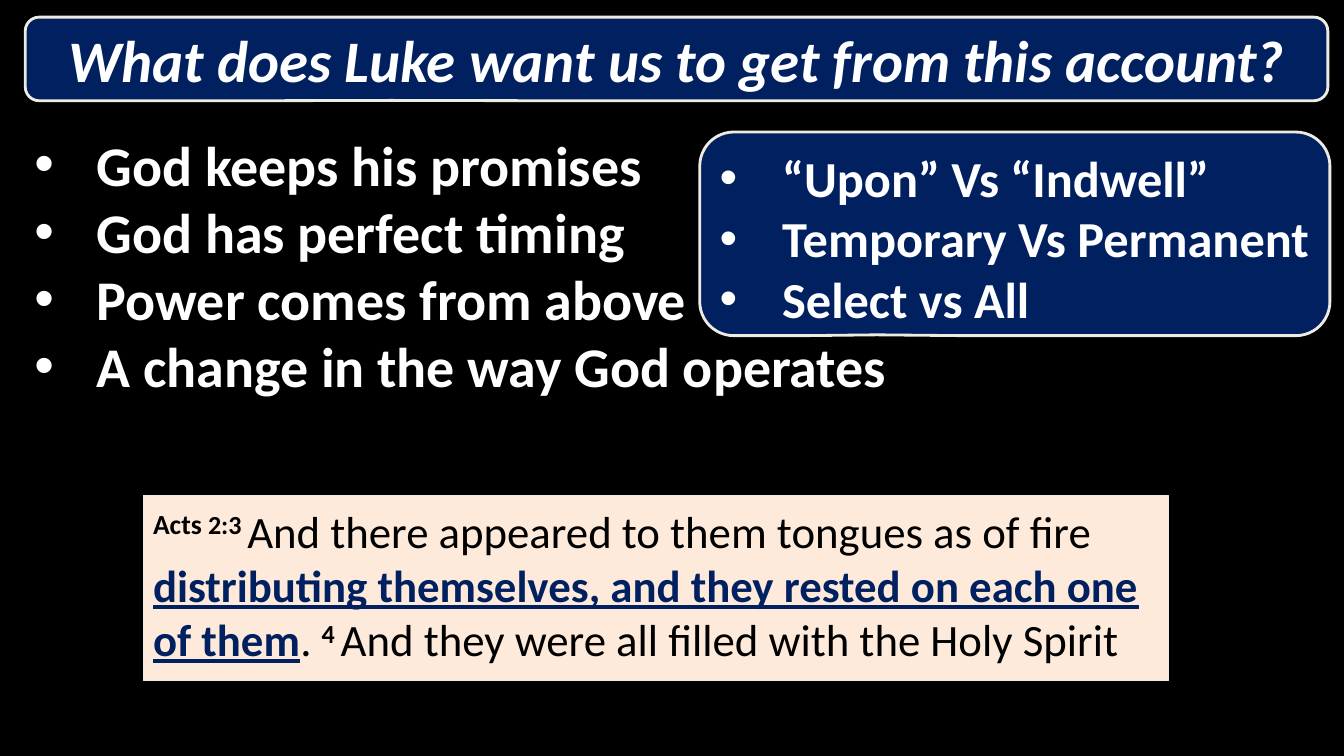
from lxml import etree
from pptx import Presentation
from pptx.dml.color import RGBColor
from pptx.enum.shapes import MSO_SHAPE
from pptx.enum.text import MSO_ANCHOR, MSO_AUTO_SIZE, PP_ALIGN
from pptx.oxml.ns import qn
from pptx.util import Inches, Pt

CALLOUT = MSO_SHAPE.ROUNDED_RECTANGULAR_CALLOUT
RECTANGLE = MSO_SHAPE.RECTANGLE
LEFT, CENTER = PP_ALIGN.LEFT, PP_ALIGN.CENTER
TOP, MIDDLE = MSO_ANCHOR.TOP, MSO_ANCHOR.MIDDLE
NO_AUTOFIT = MSO_AUTO_SIZE.NONE

FONT = "Calibri"
BLACK, WHITE, NAVY = "000000", "FFFFFF", "002060"
CREAM, PEACH = "EEECE1", "FDEADA"
BULLET_INDENT = 0.62

TITLE = "What does Luke want us to get from this account?"
LESSONS = [
    "God keeps his promises",
    "God has perfect timing",
    "Power comes from above",
    "A change in the way God operates",
]
CONTRASTS = ["“Upon” Vs “Indwell”", "Temporary Vs Permanent", "Select vs All"]
SCRIPTURE = [
    ("Acts ", 34, "verse"),
    ("2:3\u00a0", 32, "verse"),
    ("And there appeared to them tongues as of fire ", 32, "plain"),
    ("distributing themselves, and\u00a0they\u00a0rested on each one of them", 32, "stress"),
    (". ", 32, "plain"),
    ("4\u00a0", 32, "verse"),
    ("And they were all\u00a0filled with the Holy Spirit", 32, "plain"),
]


def color(value):
    return RGBColor.from_string(value)


def place(shape, box):
    shape.left, shape.top, shape.width, shape.height = map(Inches, box)


def set_font(font, size, value, bold=True):
    font.name, font.size, font.bold = FONT, Pt(size), bold
    font.color.rgb = color(value)


def set_frame(shape, anchor, margins=(0.1, 0.05, 0.1, 0.05)):
    frame = shape.text_frame
    frame.word_wrap = True
    frame.auto_size = NO_AUTOFIT
    frame.vertical_anchor = anchor
    (frame.margin_left, frame.margin_top,
     frame.margin_right, frame.margin_bottom) = map(Inches, margins)
    return frame


def add_panel(slide, box, kind, fill, line_width):
    panel = slide.shapes.add_shape(kind, *map(Inches, box))
    panel.shadow.inherit = False
    panel.fill.solid()
    panel.fill.fore_color.rgb = color(fill)
    panel.line.color.rgb = color(CREAM)
    panel.line.width = Pt(line_width)
    if kind == CALLOUT:
        for index, value in enumerate((-0.219, 0.496, 0.167)):
            panel.adjustments[index] = value
    return panel


def write_bullets(frame, items, size):
    for index, item in enumerate(items):
        paragraph = frame.paragraphs[0] if index == 0 else frame.add_paragraph()
        paragraph.text = item
        paragraph.alignment = LEFT
        paragraph.space_before = Pt(0)
        set_font(paragraph.font, size, WHITE)
        properties = paragraph._p.get_or_add_pPr()
        properties.set("marL", str(Inches(BULLET_INDENT)))
        properties.set("indent", str(-Inches(BULLET_INDENT)))
        bullet_font = etree.Element(qn("a:buFont"), typeface="Arial")
        bullet = etree.Element(qn("a:buChar"), char="•")
        spacing = properties.find(qn("a:spcBef"))
        spacing.addnext(bullet_font)
        bullet_font.addnext(bullet)


def build_title(slide, box):
    add_panel(slide, box, CALLOUT, NAVY, 2)
    title = slide.shapes.title
    slide.shapes._spTree.append(title._element)
    place(title, box)
    frame = set_frame(title, MIDDLE)
    frame.text = TITLE
    paragraph = frame.paragraphs[0]
    paragraph.alignment = CENTER
    set_font(paragraph.font, 42, WHITE)
    paragraph.font.italic = True


def build_lessons(slide, box):
    body = slide.placeholders[1]
    place(body, box)
    frame = set_frame(body, TOP, (0.34, 0.29, 0.34, 0.29))
    write_bullets(frame, LESSONS, 40)


def build_contrasts(slide, box):
    panel = add_panel(slide, box, CALLOUT, NAVY, 2)
    frame = set_frame(panel, TOP, (0.1, 0.05, 0, 0.05))
    write_bullets(frame, CONTRASTS, 36)


def build_scripture(slide, box):
    panel = add_panel(slide, box, RECTANGLE, PEACH, 0.75)
    paragraph = set_frame(panel, TOP).paragraphs[0]
    paragraph.alignment = LEFT
    for text, size, style in SCRIPTURE:
        run = paragraph.add_run()
        run.text = text
        stressed = style == "stress"
        set_font(run.font, size, NAVY if stressed else BLACK, style != "plain")
        run.font.underline = stressed
        if style == "verse":
            run.font._element.set("baseline", "30000")


def main():
    presentation = Presentation()
    presentation.slide_width = Inches(13.33)
    presentation.slide_height = Inches(7.5)
    slide = presentation.slides.add_slide(presentation.slide_layouts[1])
    slide.background.fill.solid()
    slide.background.fill.fore_color.rgb = color(BLACK)
    build_title(slide, (0.25, 0.17, 12.92, 0.83))
    build_lessons(slide, (0, 1, 9.33, 4.91))
    build_contrasts(slide, (6.94, 1.31, 6.25, 2.02))
    build_scripture(slide, (1.42, 4.92, 10.17, 1.83))
    presentation.save("out.pptx")


if __name__ == "__main__":
    main()
